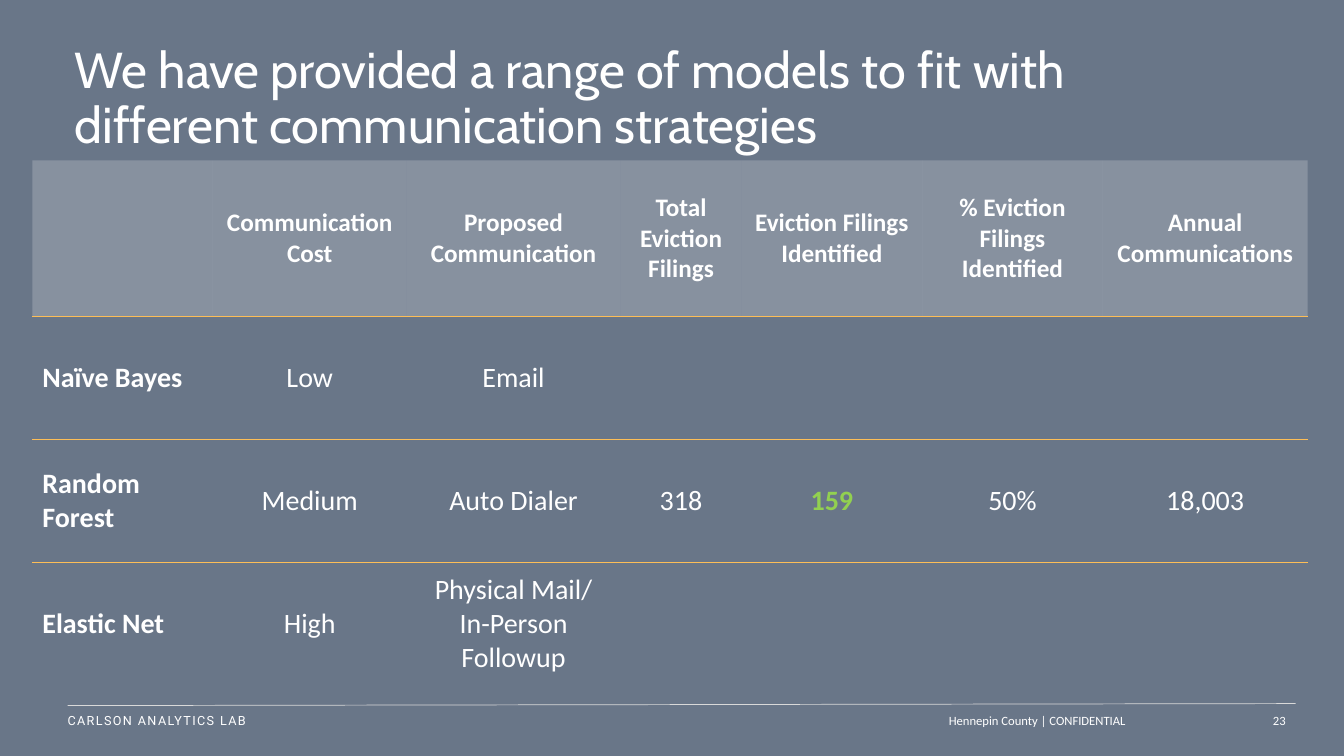
from lxml import etree
from pptx import Presentation
from pptx.dml.color import RGBColor
from pptx.enum.text import MSO_ANCHOR, PP_ALIGN
from pptx.oxml import parse_xml
from pptx.oxml.ns import nsdecls, qn
from pptx.util import Inches, Pt

WHITE, GOLD, GREEN, SLATE, GREY = "FFFFFF", "FDBE57", "92D050", "697688", "D9D9D9"
NO_STYLE = "{2D5ABB26-0587-4C30-8999-92F81FD0307C}"
COLUMN_SHARES = [1.79, 1.92, 2.12, 1.2, 1.79, 1.79, 2.03]
ROW_SHARES = [1.55, 1.22, 1.22, 1.22]
ROWS = [
    ["", "Communication Cost", "Proposed Communication", "Total Eviction Filings",
     "Eviction Filings Identified", "% Eviction Filings Identified", "Annual Communications"],
    ["Naïve Bayes", "Low", "Email", "", "", "", ""],
    ["Random Forest", "Medium", "Auto Dialer", "318", "159", "50%", "18,003"],
    ["Elastic Net", "High", "Physical Mail/\nIn-Person Followup", "", "", "", ""],
]
HIGHLIGHT = "159"


def color(value):
    """Turn a hex string into a colour."""
    return RGBColor.from_string(value)


def add_run(paragraph, text, size, font="Calibri", fill=WHITE, bold=False):
    """Add one formatted run to a paragraph."""
    run = paragraph.add_run()
    run.text = text
    run.font.size = Pt(size)
    run.font.name = font
    run.font.bold = bold
    run.font.color.rgb = color(fill)
    return run


def add_title(slide, box, text):
    """Place and format the title placeholder in its box."""
    title = slide.shapes.title
    title.left, title.top, title.width, title.height = map(Inches, box)
    frame = title.text_frame
    frame.word_wrap = True
    frame.vertical_anchor = MSO_ANCHOR.MIDDLE
    paragraph = frame.paragraphs[0]
    paragraph.alignment = PP_ALIGN.LEFT
    paragraph.line_spacing = 0.9
    add_run(paragraph, text, 36, "Cabin")


def add_label(slide, box, text, alignment, font="Calibri", inset=0):
    """Add a small footer label and return its run."""
    frame = slide.shapes.add_textbox(*map(Inches, box)).text_frame
    frame.word_wrap = True
    frame.vertical_anchor = MSO_ANCHOR.MIDDLE
    frame.margin_left = Inches(inset)
    frame.paragraphs[0].alignment = alignment
    return add_run(frame.paragraphs[0], text, 9, font)


def add_footer(slide, box):
    """Add the footer rule and its three labels in the box."""
    left, top, width, height = box
    rule = slide.shapes.add_connector(
        1, Inches(left), Inches(top + 0.02), Inches(left + width), Inches(top))
    rule.line.color.rgb = color(GREY)
    rule.line.width = Pt(0.5)
    etree.SubElement(rule._element.spPr, qn("a:effectLst"))
    lab = add_label(slide, (left, top, 3.24, height), "CARLSON ANALYTICS LAB",
                    PP_ALIGN.LEFT, "Roboto")
    lab.font._element.set("spc", "100")
    add_label(slide, (left + 4.65, top, 5.94, height), "Hennepin County | CONFIDENTIAL",
              PP_ALIGN.RIGHT, inset=0.1)
    add_label(slide, (left + width - 0.45, top, 0.45, height), "23", PP_ALIGN.RIGHT)


def add_border(cell, side):
    """Draw a gold line on one side of a cell."""
    cell._tc.get_or_add_tcPr().insert(0, parse_xml(
        f'<a:{side} {nsdecls("a")} w="12700"><a:solidFill><a:srgbClr val="{GOLD}"/>'
        f'</a:solidFill></a:{side}>'))


def fill_cell(cell, text, row, column):
    """Write and format one table cell."""
    cell.vertical_anchor = MSO_ANCHOR.MIDDLE
    if row == 0:
        cell.fill.solid()
        cell.fill.fore_color.rgb = color(WHITE)
        tint = cell._tc.tcPr.find(".//" + qn("a:srgbClr"))
        etree.SubElement(tint, qn("a:alpha")).set("val", "20000")
    else:
        cell.fill.background()
    if row < len(ROWS) - 1:
        add_border(cell, "lnB")
    if row > 0:
        add_border(cell, "lnT")
    if not text:
        return
    for index, line in enumerate(text.split("\n")):
        frame = cell.text_frame
        paragraph = frame.add_paragraph() if index else frame.paragraphs[0]
        paragraph.alignment = PP_ALIGN.CENTER if column else PP_ALIGN.LEFT
        add_run(paragraph, line, 20 if row else 18,
                fill=GREEN if text == HIGHLIGHT else WHITE,
                bold=row == 0 or column == 0 or text == HIGHLIGHT)


def add_models_table(slide, box):
    """Add the table of models, sharing out the box among columns and rows."""
    left, top, width, height = map(Inches, box)
    frame = slide.shapes.add_table(len(ROWS), len(COLUMN_SHARES), left, top, width, height)
    table = frame.table
    table.first_row = table.horz_banding = False
    table._tbl.tblPr.find(qn("a:tableStyleId")).text = NO_STYLE
    for column, share in zip(table.columns, COLUMN_SHARES):
        column.width = int(width * share / sum(COLUMN_SHARES))
    for row, share in zip(table.rows, ROW_SHARES):
        row.height = int(height * share / sum(ROW_SHARES))
    for row, texts in enumerate(ROWS):
        for column, text in enumerate(texts):
            fill_cell(table.cell(row, column), text, row, column)


def main():
    """Build and save the slide."""
    presentation = Presentation()
    presentation.slide_width = Inches(13.33)
    presentation.slide_height = Inches(7.5)
    slide = presentation.slides.add_slide(presentation.slide_layouts[5])
    slide.background.fill.solid()
    slide.background.fill.fore_color.rgb = color(SLATE)
    add_title(slide, (0.64, 0.44, 11.2, 1.1),
              "We have provided a range of models to fit with different communication strategies")
    add_models_table(slide, (0.32, 1.59, 12.65, 5.21))
    add_footer(slide, (0.67, 6.98, 12.18, 0.33))
    presentation.save("out.pptx")


if __name__ == "__main__":
    main()
